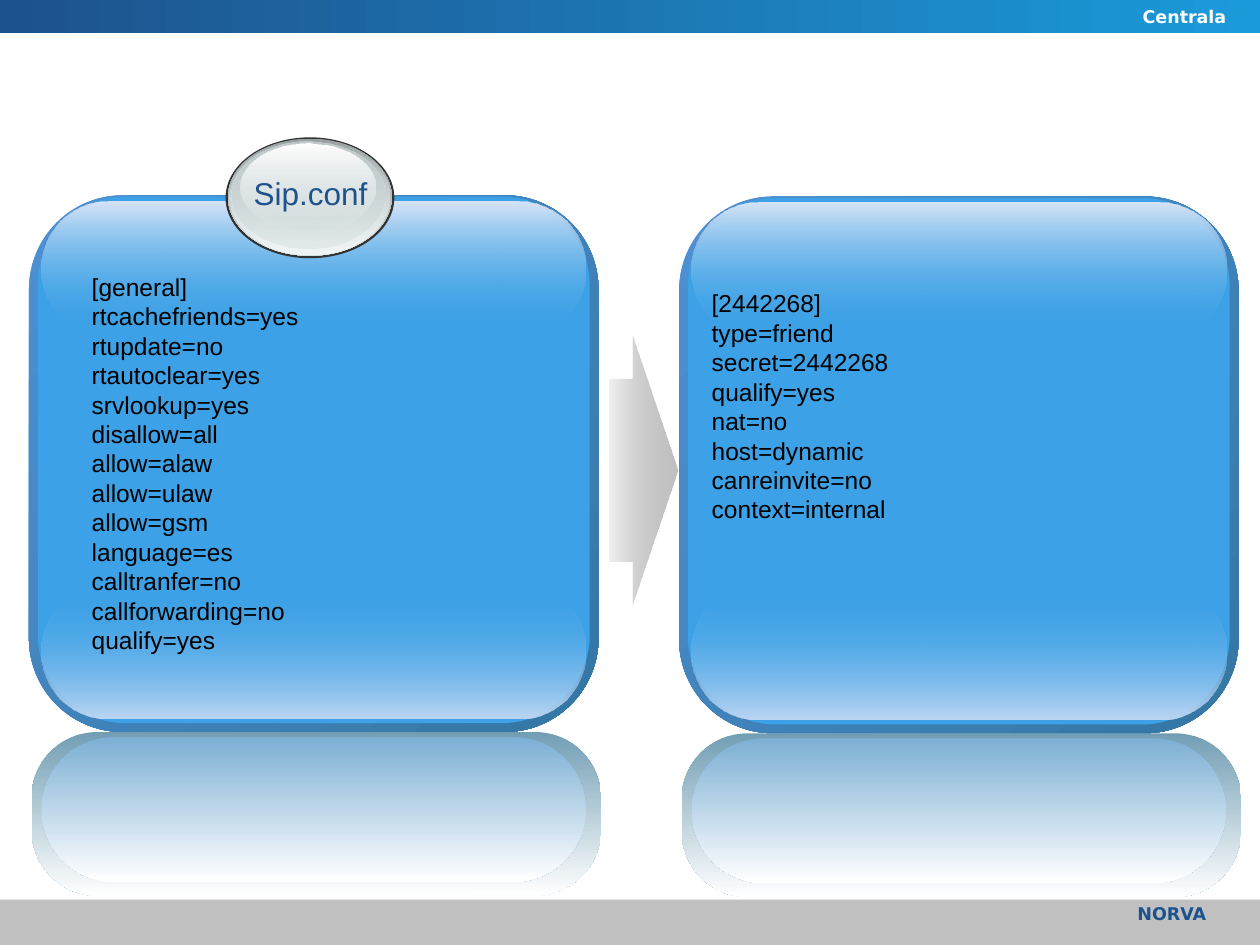
"""Build a slide with two glossy panels of SIP settings joined by an arrow."""
import pptx
import pptx.dml.color
import pptx.enum.shapes
import pptx.enum.text
import pptx.oxml.ns
import pptx.util
from lxml import etree

Inches = pptx.util.Inches
SHAPE = pptx.enum.shapes.MSO_SHAPE
ALIGN = pptx.enum.text.PP_ALIGN
RGB = pptx.dml.color.RGBColor.from_string
qn = pptx.oxml.ns.qn

THEME = {
    "navy": "1D528D", "sky": "1B9AD9", "footer": "C0C0C0", "white": "FFFFFF", "black": "000000",
    "panel": "3CA1E6", "rim": ("4E91D4", "3477A4"), "top_gloss": "D7E5F7", "low_gloss": "BDD6F3",
    "mirror_rim": "729EB4", "mirror": "7DAFD4", "badge_edge": "333333", "badge_dark": "99A1A2",
    "badge": "D6E1E2", "badge_light": "F2F5F5", "badge_mid": "C1CBCC", "arrow": ("898989", "C0C0C0"),
    "body_font": "Arial", "brand_font": "DejaVu Sans",
    "brand_size": 10, "badge_size": 18, "body_size": 14,
}


def add_form(shapes, kind, frame, colors, angle=0, alphas=(100, 100), adjust=()):
    """Add a borderless shape with a solid or two-stop gradient fill."""
    form = shapes.add_shape(kind, *map(Inches, frame))
    form.shadow.inherit = False
    form.line.fill.background()
    for index, value in enumerate(adjust):
        form.adjustments[index] = value
    if isinstance(colors, str):
        form.fill.solid()
        form.fill.fore_color.rgb = RGB(colors)
        return
    form.fill.gradient()
    form.fill.gradient_angle = -angle % 360
    for stop, color in zip(form.fill.gradient_stops, colors):
        stop.color.rgb = RGB(color)
    for node, alpha in zip(form._element.spPr.iter(qn("a:srgbClr")), alphas):
        if alpha < 100:
            etree.SubElement(node, qn("a:alpha")).set("val", str(alpha * 1000))


def add_text(shapes, frame, lines, size, color, font, align=ALIGN.LEFT, bold=False):
    """Add a wrapping text box with one paragraph per line."""
    box = shapes.add_textbox(*map(Inches, frame))
    box.text_frame.word_wrap = True
    for index, line in enumerate(lines):
        para = box.text_frame.add_paragraph() if index else box.text_frame.paragraphs[0]
        para.alignment = align
        span = para.add_run()
        span.text = line
        span.font.size = pptx.util.Pt(size)
        span.font.name = font
        span.font.bold = bold
        span.font.color.rgb = RGB(color)


deck = pptx.Presentation()
deck.slide_width, deck.slide_height = Inches(10), Inches(7.5)
page = deck.slides.add_slide(deck.slide_layouts[6])

add_form(page.shapes, SHAPE.RECTANGLE, (0, 7.14, 10, 0.36), THEME["footer"])
add_form(page.shapes, SHAPE.RECTANGLE, (0, 0, 10, 0.26), (THEME["navy"], THEME["sky"]))
for frame, label, color in (
    ((6.5, 7.12, 3.17, 0.32), "NORVA", THEME["navy"]),
    ((7.5, 0, 2.33, 0.25), "Centrala", THEME["white"]),
):
    add_text(page.shapes, frame, [label], THEME["brand_size"], color,
             THEME["brand_font"], ALIGN.RIGHT, True)

general_lines = [
    "[general]", "rtcachefriends=yes", "rtupdate=no", "rtautoclear=yes", "srvlookup=yes",
    "disallow=all", "allow=alaw", "allow=ulaw", "allow=gsm", "language=es",
    "calltranfer=no", "callforwarding=no", "qualify=yes",
]
extension_lines = [
    "[2442268]", "type=friend", "secret=2442268", "qualify=yes", "nat=no",
    "host=dynamic", "canreinvite=no", "context=internal",
]
panels = (
    (0.23, 1.55, 4.52, (0.63, 2.11, 4.3, 3.16), general_lines),
    (5.39, 1.56, 4.44, (5.55, 2.24, 4.22, 1.99), extension_lines),
)
layers = (
    (0, 0, 0, 4.26, 0.175, THEME["rim"], 45, (100, 100)),
    (0.07, 0.01, 0.14, 4.18, 0.167, THEME["panel"], 0, (100, 100)),
    (0.1, 3.09, 0.2, 1.06, 0.5, (THEME["panel"], THEME["low_gloss"]), 90, (0, 100)),
    (0.1, 0.05, 0.2, 1.06, 0.5, (THEME["top_gloss"], THEME["panel"]), 90, (100, 0)),
    (0.02, 4.26, 0, 1.3, 0.404, (THEME["mirror_rim"], THEME["white"]), 90, (100, 100)),
    (0.1, 4.3, 0.2, 1.15, 0.5, (THEME["mirror"], THEME["white"]), 90, (100, 100)),
)
for left, top, width, text_frame, lines in panels:
    panel = page.shapes.add_group_shape()
    for shift, drop, narrower, height, corner, colors, angle, alphas in layers:
        add_form(panel.shapes, SHAPE.ROUNDED_RECTANGLE,
                 (left + shift, top + drop, width - narrower, height),
                 colors, angle, alphas, (corner,))
    add_text(panel.shapes, text_frame, lines, THEME["body_size"], THEME["black"], THEME["body_font"])

badge = page.shapes.add_group_shape()
for frame, colors, alphas in (
    ((1.79, 1.09, 1.34, 0.96), THEME["badge_edge"], (100, 100)),
    ((1.81, 1.1, 1.3, 0.93), (THEME["badge_dark"], THEME["badge"]), (100, 100)),
    ((1.82, 1.11, 1.27, 0.91), (THEME["badge"], THEME["badge_light"]), (0, 100)),
    ((1.84, 1.12, 1.21, 0.85), (THEME["badge_mid"], THEME["badge"]), (100, 48)),
    ((1.91, 1.14, 1.07, 0.69), (THEME["white"], THEME["badge"]), (100, 38)),
):
    add_form(badge.shapes, SHAPE.OVAL, frame, colors, 90, alphas)
add_text(badge.shapes, (1.85, 1.33, 1.23, 0.4), ["Sip.conf"], THEME["badge_size"],
         THEME["navy"], THEME["body_font"], ALIGN.CENTER)

add_form(page.shapes, SHAPE.RIGHT_ARROW, (4.84, 2.66, 0.54, 2.14), THEME["arrow"],
         0, (12, 100), (0.677, 0.662))

deck.save("out.pptx")
